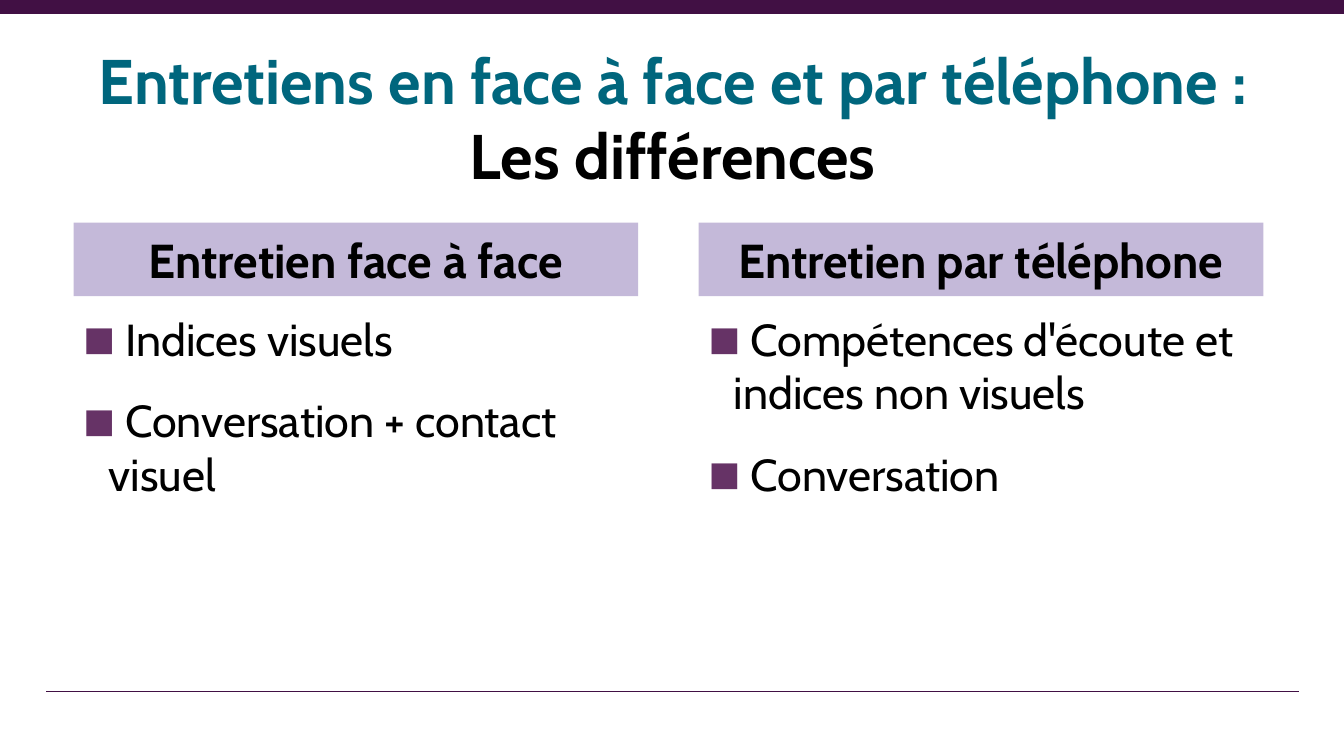
from lxml.etree import SubElement
from pptx import Presentation
from pptx.dml.color import RGBColor
from pptx.enum.shapes import MSO_CONNECTOR, MSO_SHAPE
from pptx.enum.text import MSO_ANCHOR, MSO_AUTO_SIZE, PP_ALIGN
from pptx.oxml.ns import qn
from pptx.util import Inches, Pt

FONT = "Cabin"
BLACK = RGBColor(0x00, 0x00, 0x00)
TEAL = RGBColor(0x00, 0x66, 0x7D)
LILAC = RGBColor(0xC4, 0xB9, 0xD9)
PLUM = RGBColor(0x41, 0x10, 0x44)
BULLET = RGBColor(0x66, 0x33, 0x66)

WIDTH, HEIGHT = 13.33, 7.5
COLUMN_LEFT, COLUMN_TOP, COLUMN_WIDTH, COLUMN_PITCH = 0.73, 2.21, 5.6, 6.2
HEADING_HEIGHT, LIST_OFFSET, LIST_HEIGHT = 0.73, 0.83, 2.44

TITLE = [("Entretiens en face à face et par téléphone :", TEAL),
         ("Les différences", BLACK)]
COLUMNS = [
    ("Entretien face à face",
     ["Indices visuels", "Conversation + contact visuel"]),
    ("Entretien par téléphone",
     ["Compétences d'écoute et indices non visuels", "Conversation"]),
]


def add_span(para, text, size, color=BLACK, bold=False):
    span = para.add_run()
    span.text = text
    span.font.name = FONT
    span.font.size = Pt(size)
    span.font.bold = bold
    span.font.color.rgb = color


def paragraphs(frame, count):
    """Return count paragraphs of the frame, the first being the existing one."""
    return [frame.paragraphs[0]] + [frame.add_paragraph() for _ in range(count - 1)]


def add_rule(page, left, right, y, weight):
    rule = page.shapes.add_connector(
        MSO_CONNECTOR.STRAIGHT, Inches(left), Inches(y), Inches(right), Inches(y))
    rule.line.color.rgb = PLUM
    rule.line.width = Pt(weight)
    SubElement(rule._element.spPr, qn("a:effectLst"))


def set_bullet(para):
    """Give the paragraph a hanging square bullet."""
    properties = para._p.get_or_add_pPr()
    properties.set("marL", str(Inches(0.25)))
    properties.set("indent", str(-Inches(0.25)))
    color = SubElement(properties, qn("a:buClr"))
    SubElement(color, qn("a:srgbClr"), val=str(BULLET))
    SubElement(properties, qn("a:buSzPct"), val="75000")
    SubElement(properties, qn("a:buFont"), typeface=FONT)
    SubElement(properties, qn("a:buChar"), char="■")


def fill_title(page, left, top, width, height):
    title = page.shapes.title
    title.left, title.top = Inches(left), Inches(top)
    title.width, title.height = Inches(width), Inches(height)
    frame = title.text_frame
    frame.word_wrap = True
    frame.auto_size = MSO_AUTO_SIZE.NONE
    frame.vertical_anchor = MSO_ANCHOR.TOP
    for para, (text, color) in zip(paragraphs(frame, len(TITLE)), TITLE):
        para.alignment = PP_ALIGN.CENTER
        add_span(para, text, 45, color, bold=True)


def add_heading(page, text, left, top, width, height):
    band = page.shapes.add_shape(
        MSO_SHAPE.RECTANGLE, Inches(left), Inches(top), Inches(width), Inches(height))
    band.shadow.inherit = False
    band.fill.solid()
    band.fill.fore_color.rgb = LILAC
    band.line.fill.background()
    band.text_frame.word_wrap = True
    band.text_frame.vertical_anchor = MSO_ANCHOR.MIDDLE
    para = band.text_frame.paragraphs[0]
    para.alignment = PP_ALIGN.CENTER
    add_span(para, text, 34, bold=True)


def add_list(page, items, left, top, width, height):
    box = page.shapes.add_textbox(
        Inches(left), Inches(top), Inches(width), Inches(height))
    frame = box.text_frame
    frame.word_wrap = True
    for index, para in enumerate(paragraphs(frame, len(items))):
        para.space_before = Pt(20 if index else 0)
        set_bullet(para)
        add_span(para, " " + items[index], 32)


def add_column(page, heading, items, left, top, width):
    add_heading(page, heading, left, top, width, HEADING_HEIGHT)
    add_list(page, items, left, top + LIST_OFFSET, width, LIST_HEIGHT)


def main():
    deck = Presentation()
    deck.slide_width, deck.slide_height = Inches(WIDTH), Inches(HEIGHT)
    page = deck.slides.add_slide(deck.slide_layouts[5])
    add_rule(page, 0.46, 12.88, 6.86, 1.25)
    add_rule(page, 0, WIDTH, 0.07, 10.25)
    fill_title(page, 0.25, 0.36, 12.84, 1.59)
    for index, (heading, items) in enumerate(COLUMNS):
        left = COLUMN_LEFT + index * COLUMN_PITCH
        add_column(page, heading, items, left, COLUMN_TOP, COLUMN_WIDTH)
    deck.save("out.pptx")


if __name__ == "__main__":
    main()
